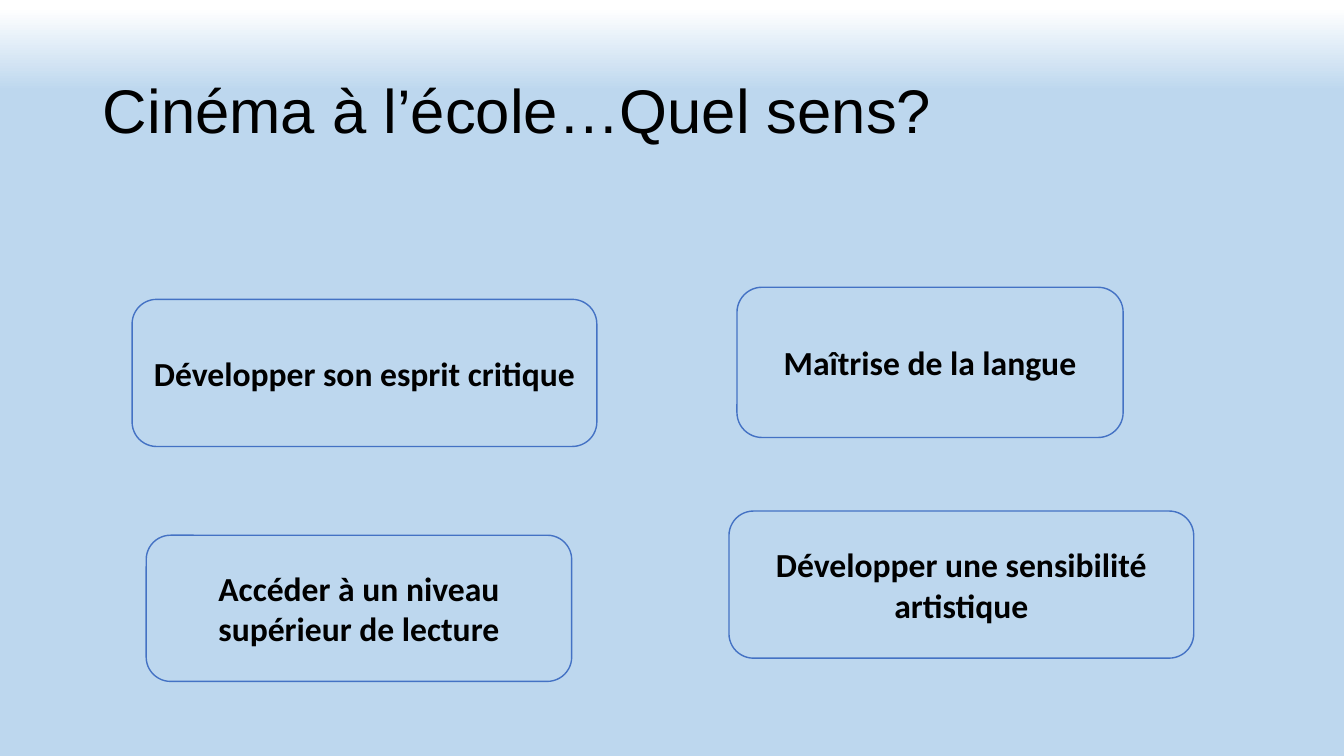
"""Build the slide on the purposes of cinema at school."""
from pptx import Presentation
from pptx.dml.color import RGBColor
from pptx.enum.shapes import MSO_SHAPE as Shape
from pptx.enum.text import MSO_ANCHOR as Anchor, PP_ALIGN as Align
from pptx.util import Inches, Pt

COLORS = {"top": "FFFFFF", "sky": "BDD7EE", "outline": "4472C4", "text": "000000"}


def format_text(shape, font_name, size, bold):
    """Style the shape's single paragraph and return it."""
    shape.text_frame.word_wrap = True
    shape.text_frame.vertical_anchor = Anchor.MIDDLE
    paragraph = shape.text_frame.paragraphs[0]
    font = paragraph.runs[0].font
    font.name, font.size, font.bold = font_name, Pt(size), bold
    font.color.rgb = RGBColor.from_string(COLORS["text"])
    return paragraph


presentation = Presentation()
presentation.slide_width, presentation.slide_height = Inches(13.33), Inches(7.5)
slide = presentation.slides.add_slide(presentation.slide_layouts[5])

background = slide.background.fill
background.gradient()
background.gradient_angle = 270
for stop, position, color in zip(background.gradient_stops, (0.01, 0.12), ("top", "sky")):
    stop.position = position
    stop.color.rgb = RGBColor.from_string(COLORS[color])

title = slide.shapes.title
title.left, title.top, title.width, title.height = map(Inches, (0.92, 0.4, 11.5, 1.45))
title.text_frame.text = "Cinéma à l’école…Quel sens?"
heading = format_text(title, "Arial", 44, False)
heading.alignment = Align.LEFT
heading.line_spacing = 0.9

purposes = [
    ("Développer son esprit critique", 1.31, 2.97, 4.61, 1.46),
    ("Développer une sensibilité artistique", 7.23, 5.07, 4.61, 1.46),
    ("Accéder à un niveau supérieur de lecture", 1.45, 5.31, 4.22, 1.45),
    ("Maîtrise de la langue", 7.31, 2.85, 3.83, 1.49),
]
for text, *bounds in purposes:
    box = slide.shapes.add_shape(Shape.ROUNDED_RECTANGLE, *map(Inches, bounds))
    box.shadow.inherit = False
    box.fill.background()
    box.line.color.rgb = RGBColor.from_string(COLORS["outline"])
    box.line.width = Pt(1)
    box.text_frame.text = text
    format_text(box, "Calibri", 24, True).alignment = Align.CENTER

presentation.save("out.pptx")
